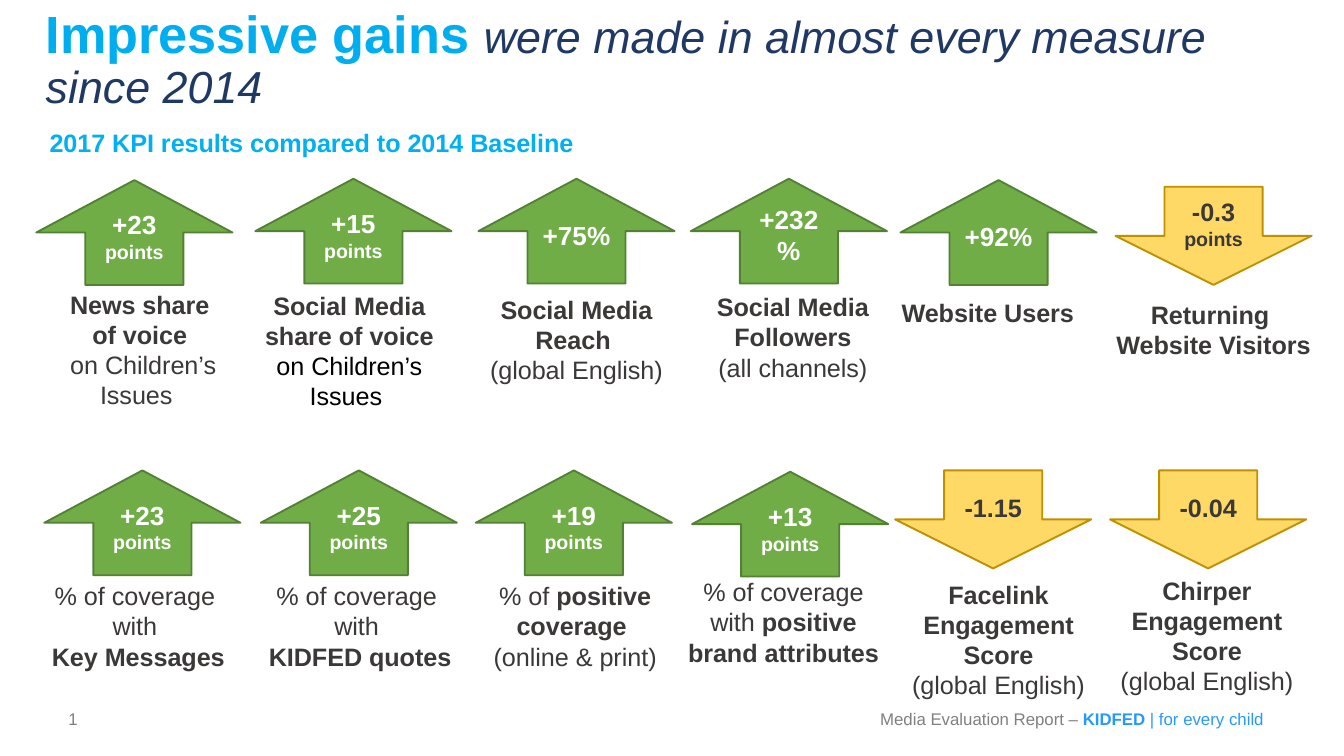
import pptx
import pptx.dml.color
import pptx.enum.shapes
import pptx.enum.text
import pptx.util
from pptx.util import Inches

COLORS = {
    "cyan": "00AEEF", "navy": "203864", "subtitle": "00B0F0", "text": "3B3838",
    "black": "000000", "white": "FFFFFF", "page": "7F7F7F", "footer": "808080",
    "link": "2899FC", "green": "70AD47", "green_line": "538035",
    "yellow": "FFD966", "yellow_line": "BF9000",
}
ALIGN = pptx.enum.text.PP_ALIGN
ANCHOR = pptx.enum.text.MSO_ANCHOR
SHAPE = pptx.enum.shapes.MSO_SHAPE

SLIDE_WIDTH = 10
SLIDE_HEIGHT = SLIDE_WIDTH * 9 / 16
ARROW_WIDTH = 1.46
UP_HEIGHT = 0.78
DOWN_HEIGHT = 0.73

CHILDREN = "on Children’s Issues "
ENGLISH = [("(global English)", False)]
COVERAGE_WITH = [[("% of coverage ", False)], [("with ", False)]]

KPIS = [
    (0.27, 1.34, "+23", "points", (0.05, 0.76, 1.44, 1.01),
     [[("News share of voice", True)], [(" " + CHILDREN, False)]]),
    (1.9, 1.33, "+15", "points", (-0.07, 0.78, 1.54, 1.01),
     [[("Social Media share of voice ", True), (CHILDREN, False, "black")]]),
    (3.56, 1.33, "+75%", None, (-0.1, 0.81, 1.66, 0.78),
     [[("Social Media Reach ", True)], ENGLISH]),
    (5.14, 1.33, "+232%", None, (-0.07, 0.79, 1.66, 0.78),
     [[("Social Media Followers", True)], [("(all channels)", False)]]),
    (6.7, 1.34, "+92%", None, (-0.18, 0.82, 1.66, 0.33),
     [[("Website Users", True)]]),
    (8.3, 1.39, "-0.3", "points", (-0.1, 0.79, 1.66, 0.56),
     [[("Returning ", True)], [("Website Visitors", True)]]),
    (0.33, 3.5, "+23", "points", (-0.08, 0.77, 1.56, 0.78),
     COVERAGE_WITH + [[("Key Messages", True)]]),
    (1.94, 3.5, "+25", "points", (-0.09, 0.77, 1.66, 0.78),
     COVERAGE_WITH + [[("KIDFED quotes", True)]]),
    (3.54, 3.5, "+19", "points", (-0.09, 0.77, 1.66, 0.78),
     [[("% of ", False), ("positive coverage ", True)], [("(online & print)", False)]]),
    (5.15, 3.51, "+13", "points", (-0.15, 0.73, 1.66, 0.78),
     [[("% of coverage with ", False), ("positive brand attributes", True)]]),
    (6.66, 3.5, "-1.15", None, (-0.06, 0.76, 1.66, 1.01),
     [[("Facelink Engagement Score", True)], ENGLISH]),
    (8.26, 3.5, "-0.04", None, (-0.04, 0.73, 1.52, 1.01),
     [[("Chirper", True)], [("Engagement Score", True)], ENGLISH]),
]


def rgb(name):
    return pptx.dml.color.RGBColor.from_string(COLORS[name])


def style(font, size, color, bold=False, italic=False):
    font.name = "Arial"
    font.size = pptx.util.Pt(size)
    font.color.rgb = rgb(color)
    font.bold = bold
    font.italic = italic


def add_text(slide, box, paragraphs, align=ALIGN.LEFT, anchor=ANCHOR.TOP):
    shape = slide.shapes.add_textbox(*map(Inches, box))
    frame = shape.text_frame
    frame.word_wrap = True
    frame.vertical_anchor = anchor
    for index, runs in enumerate(paragraphs):
        paragraph = frame.add_paragraph() if index else frame.paragraphs[0]
        paragraph.alignment = align
        for text, *look in runs:
            run = paragraph.add_run()
            run.text = text
            style(run.font, *look)
    return frame


def add_title(slide, box):
    left, top, width, height = box
    frame = add_text(slide, (left, top, width, height), [[
        ("Impressive gains ", 28, "cyan", True),
        ("were made in almost every measure since 2014", 24, "navy", False, True)]])
    frame.margin_left = frame.margin_right = frame.margin_top = frame.margin_bottom = 0
    frame.paragraphs[0].line_spacing = 0.9
    add_text(slide, (left - 0.07, top + 0.84, 4.68, 0.33),
             [[("2017 KPI results compared to 2014 Baseline", 13.5, "subtitle", True)]])


def add_arrow(slide, left, top, value, unit):
    rising = value.startswith("+")
    kind, height, fill, line, color, size = (
        (SHAPE.UP_ARROW, UP_HEIGHT, "green", "green_line", "white", 14) if rising
        else (SHAPE.DOWN_ARROW, DOWN_HEIGHT, "yellow", "yellow_line", "text", 13.5))
    arrow = slide.shapes.add_shape(
        kind, Inches(left), Inches(top), Inches(ARROW_WIDTH), Inches(height))
    arrow.shadow.inherit = False
    arrow.fill.solid()
    arrow.fill.fore_color.rgb = rgb(fill)
    arrow.line.color.rgb = rgb(line)
    arrow.line.width = pptx.util.Pt(1)
    frame = arrow.text_frame
    frame.word_wrap = True
    frame.vertical_anchor = ANCHOR.MIDDLE
    if rising:
        frame.margin_bottom = Inches(0.19)
    lines = [(value, size)] + ([(unit, 10.5)] if unit else [])
    for index, (text, points) in enumerate(lines):
        paragraph = frame.add_paragraph() if index else frame.paragraphs[0]
        paragraph.text = text
        paragraph.alignment = ALIGN.CENTER
        style(paragraph.font, points, color, True)


def add_kpi(slide, left, top, value, unit, caption_box, caption):
    add_arrow(slide, left, top, value, unit)
    x, y, width, height = caption_box
    paragraphs = [[(text, 13.5, color[0] if color else "text", bold)
                   for text, bold, *color in runs] for runs in caption]
    add_text(slide, (left + x, top + y, width, height), paragraphs, ALIGN.CENTER)


def add_footer(slide, box):
    left, top, width, height = box
    add_text(slide, (left, top, 2.33, height), [[("1", 9, "page")]], anchor=ANCHOR.MIDDLE)
    add_text(slide, (left + width - 3.17, top, 3.17, height), [[
        ("Media Evaluation Report – ", 9, "footer"),
        ("KIDFED", 9, "link", True),
        (" | for every child", 9, "link")]], ALIGN.RIGHT, ANCHOR.MIDDLE)


def main():
    presentation = pptx.Presentation()
    presentation.slide_width = Inches(SLIDE_WIDTH)
    presentation.slide_height = Inches(SLIDE_HEIGHT)
    slide = presentation.slides.add_slide(presentation.slide_layouts[6])
    add_title(slide, (0.34, 0.06, 9.32, 0.94))
    for kpi in KPIS:
        add_kpi(slide, *kpi)
    add_footer(slide, (0.41, 5.2, 9.09, 0.3))
    presentation.save("out.pptx")


if __name__ == "__main__":
    main()
